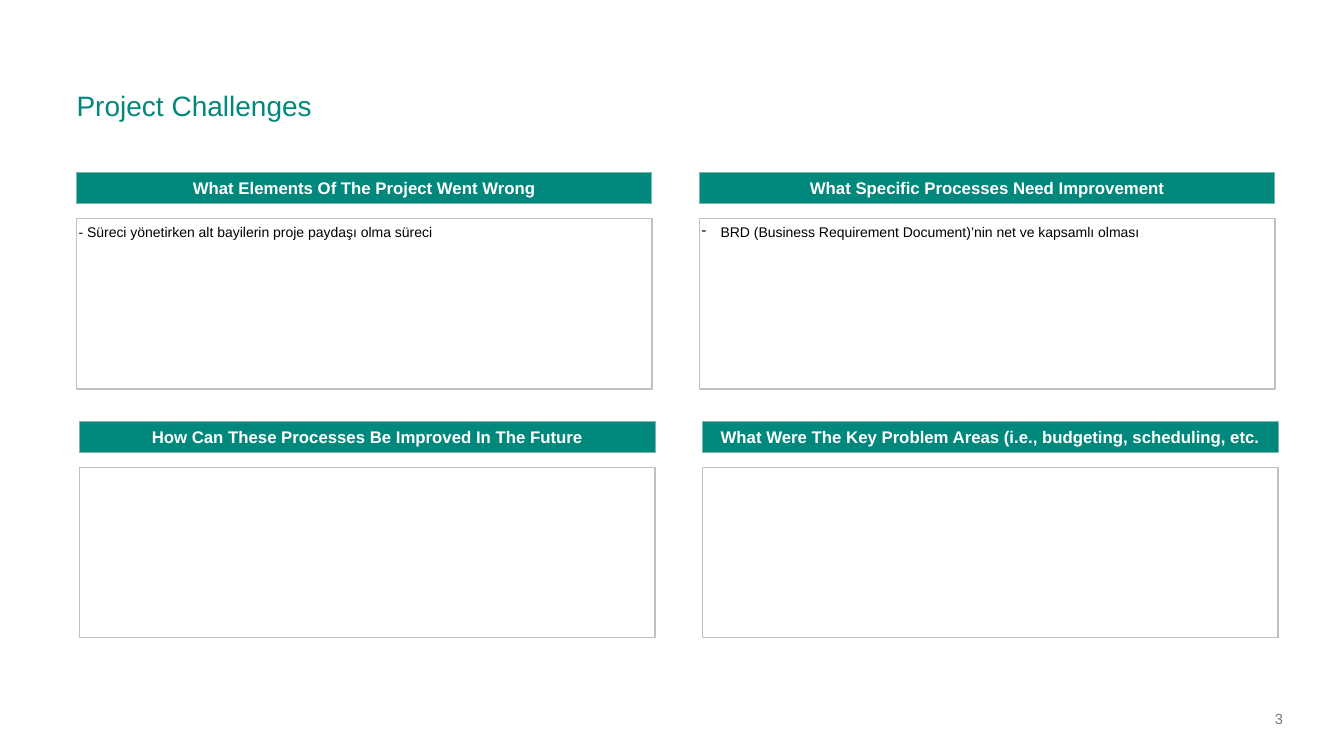
from dataclasses import dataclass

from lxml.etree import SubElement
from pptx import Presentation
from pptx.dml.color import RGBColor
from pptx.enum.shapes import MSO_SHAPE
from pptx.enum.text import MSO_ANCHOR, PP_ALIGN
from pptx.oxml.ns import qn
from pptx.shapes.autoshape import Shape
from pptx.slide import Slide
from pptx.text.text import TextFrame
from pptx.util import Cm, Pt

COLORS = {
    "teal": "00887D",
    "edge": "7FB3AD",
    "grey": "C0C0C0",
    "page": "777777",
    "white": "FFFFFF",
    "black": "000000",
}
LEFT, TOP = 1.93, 4.34
WIDTH = 14.5
HEAD, BODY = 0.79, 4.29
DROP = 1.17  # from header top to body top
COL, ROW = 15.7, 6.27
SHIFT = 0.08  # the lower row sits slightly to the right


@dataclass
class Panel:
    title: str
    note: str = ""
    dash: bool = False


PANELS = [
    Panel("What Elements Of The Project Went Wrong",
          "- Süreci yönetirken alt bayilerin proje paydaşı olma süreci"),
    Panel("What Specific Processes Need Improvement",
          "BRD (Business Requirement Document)’nin net ve kapsamlı olması", True),
    Panel("How Can These Processes Be Improved In The Future"),
    Panel("What Were The Key Problem Areas (i.e., budgeting, scheduling, etc."),
]


def color(name: str) -> RGBColor:
    return RGBColor.from_string(COLORS[name])


def write(frame: TextFrame, text: str, size: float, ink: str,
          align: PP_ALIGN = PP_ALIGN.LEFT, bold: bool = False,
          anchor: MSO_ANCHOR = MSO_ANCHOR.MIDDLE, dash: bool = False,
          inset: tuple[float, float, float, float] = (0, 0.13, 0, 0.13)) -> None:
    """Fill a frame with one paragraph; inset is left, top, right, bottom."""
    frame.word_wrap = True
    frame.vertical_anchor = anchor
    (frame.margin_left, frame.margin_top,
     frame.margin_right, frame.margin_bottom) = map(Cm, inset)
    para = frame.paragraphs[0]
    para.text = text
    para.alignment = align
    if dash:
        props = para._p.get_or_add_pPr()
        props.set("marL", str(Cm(0.48)))
        props.set("indent", str(-Cm(0.48)))
        SubElement(props, qn("a:buChar"), char="-")
    font = para.font
    font.name, font.size, font.bold = "Arial", Pt(size), bold
    font.color.rgb = color(ink)


def label(slide: Slide, x: float, y: float, w: float, h: float) -> TextFrame:
    return slide.shapes.add_textbox(Cm(x), Cm(y), Cm(w), Cm(h)).text_frame


def block(slide: Slide, x: float, y: float, h: float,
          fill: str, edge: str, weight: float) -> Shape:
    shape = slide.shapes.add_shape(
        MSO_SHAPE.RECTANGLE, Cm(x), Cm(y), Cm(WIDTH), Cm(h))
    shape.shadow.inherit = False
    shape.fill.solid()
    shape.fill.fore_color.rgb = color(fill)
    shape.line.color.rgb = color(edge)
    shape.line.width = Pt(weight)
    return shape


def draw(slide: Slide, panel: Panel, x: float, y: float) -> None:
    head = block(slide, x, y, HEAD, "teal", "edge", 0.75)
    write(head.text_frame, panel.title, 12, "white", PP_ALIGN.CENTER, True,
          inset=(0.25, 0.13, 0.25, 0.13))
    body = block(slide, x, y + DROP, BODY, "white", "grey", 1)
    if panel.note:
        write(body.text_frame, panel.note, 10, "black", anchor=MSO_ANCHOR.TOP,
              dash=panel.dash, inset=(0.05, 0.13, 0, 0.13))


def main() -> None:
    deck = Presentation()
    deck.slide_width, deck.slide_height = Cm(33.87), Cm(19.05)
    slide = deck.slides.add_slide(deck.slide_layouts[6])

    title = label(slide, LEFT, 1.96, 30.2, 1.12)
    write(title, "Project Challenges", 20, "teal",
          anchor=MSO_ANCHOR.BOTTOM, inset=(0, 0, 0, 0))
    title.paragraphs[0].line_spacing = 0.9

    for index, panel in enumerate(PANELS):
        row, col = divmod(index, 2)
        draw(slide, panel, LEFT + col * COL + row * SHIFT, TOP + row * ROW)

    write(label(slide, 32.13, 17.6, 1.63, 1.02), "3", 10.5, "page")
    deck.save("out.pptx")


if __name__ == "__main__":
    main()
